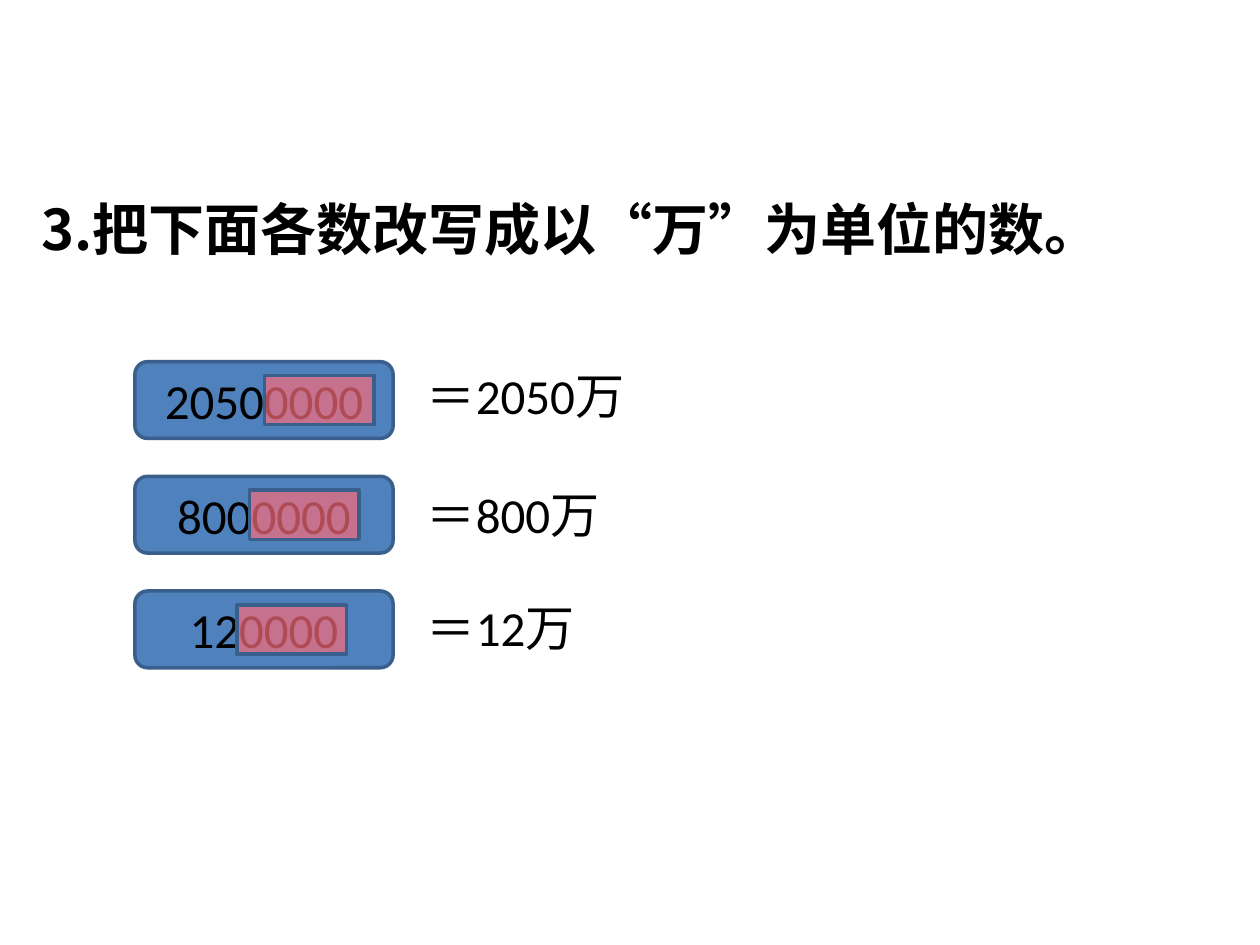
import pptx
import pptx.dml.color
import pptx.enum.shapes
import pptx.enum.text
import pptx.oxml
import pptx.oxml.ns
import pptx.util
from dataclasses import dataclass

Inches = pptx.util.Inches
Pt = pptx.util.Pt
SHAPES = pptx.enum.shapes.MSO_SHAPE
ANCHOR = pptx.enum.text.MSO_ANCHOR
ALIGN = pptx.enum.text.PP_ALIGN

QUESTION = "3.把下面各数改写成以“万”为单位的数。"
# number, answer, left edge of the zeros' highlight, top of the answer
EXERCISES = [
    ("20500000", "＝2050万", 2.10, 2.85),
    ("8000000", "＝800万", 1.98, 3.80),
    ("120000", "＝12万", 1.88, 4.69),
]
FIRST_ROW_TOP, ROW_STEP = 2.87, 0.91
HIGHLIGHT_DROP = 0.11


@dataclass(frozen=True)
class Theme:
    text: str = "000000"
    number_fill: str = "4F81BD"
    highlight_fill: str = "F96B79"
    outline: str = "3A5F8C"
    highlight_opacity: int = 70
    outline_width: float = 2
    question_size: int = 32
    number_size: int = 28
    question_font: str = "Noto Sans CJK SC"
    number_font: str = "Calibri"
    chinese_font: str = "Noto Sans CJK SC"


THEME = Theme()


def rgb(value):
    return pptx.dml.color.RGBColor.from_string(value)


def write(paragraph, wording, size, font, bold=False):
    run = paragraph.add_run()
    run.text = wording
    run.font.size = Pt(size)
    run.font.name = font
    run.font.bold = bold
    run.font.color.rgb = rgb(THEME.text)
    east_asian = pptx.oxml.parse_xml(
        f'<a:ea {pptx.oxml.ns.nsdecls("a")} typeface="{THEME.chinese_font}"/>')
    run.font._element.find(pptx.oxml.ns.qn("a:latin")).addnext(east_asian)


def add_box(slide, preset, box, fill):
    shape = slide.shapes.add_shape(preset, *map(Inches, box))
    shape.shadow.inherit = False
    shape.fill.solid()
    shape.fill.fore_color.rgb = rgb(fill)
    shape.line.color.rgb = rgb(THEME.outline)
    shape.line.width = Pt(THEME.outline_width)
    return shape


def add_label(slide, box, wording, size, font, bold=False, spacing=None):
    frame = slide.shapes.add_textbox(*map(Inches, box)).text_frame
    frame.word_wrap = True
    frame.auto_size = pptx.enum.text.MSO_AUTO_SIZE.SHAPE_TO_FIT_TEXT
    paragraph = frame.paragraphs[0]
    paragraph.line_spacing = spacing
    write(paragraph, wording, size, font, bold)


def add_number(slide, top, number):
    shape = add_box(slide, SHAPES.ROUNDED_RECTANGLE,
                    (1.07, top, 2.05, 0.61), THEME.number_fill)
    frame = shape.text_frame
    frame.vertical_anchor = ANCHOR.MIDDLE
    frame.paragraphs[0].alignment = ALIGN.CENTER
    write(frame.paragraphs[0], number, THEME.number_size, THEME.number_font)


def add_highlight(slide, left, top):
    """Cover the last four zeros with a see-through rectangle."""
    shape = add_box(slide, SHAPES.RECTANGLE,
                    (left, top, 0.87, 0.39), THEME.highlight_fill)
    color = shape._element.spPr.find(
        f'{pptx.oxml.ns.qn("a:solidFill")}/{pptx.oxml.ns.qn("a:srgbClr")}')
    color.append(pptx.oxml.parse_xml(
        f'<a:alpha {pptx.oxml.ns.nsdecls("a")} '
        f'val="{THEME.highlight_opacity * 1000}"/>'))


def main():
    deck = pptx.Presentation()
    deck.slide_width, deck.slide_height = Inches(10), Inches(7.5)
    slide = deck.slides.add_slide(deck.slide_layouts[6])

    add_label(slide, (0.23, 1.23, 9.1, 0.9), QUESTION, THEME.question_size,
              THEME.question_font, bold=True, spacing=1.5)
    for row, (number, answer, zeros_left, answer_top) in enumerate(EXERCISES):
        top = FIRST_ROW_TOP + row * ROW_STEP
        add_number(slide, top, number)
        add_highlight(slide, zeros_left, top + HIGHLIGHT_DROP)
        add_label(slide, (3.29, answer_top, 2.1, 0.57), answer,
                  THEME.number_size, THEME.number_font)

    deck.save("out.pptx")


if __name__ == "__main__":
    main()
